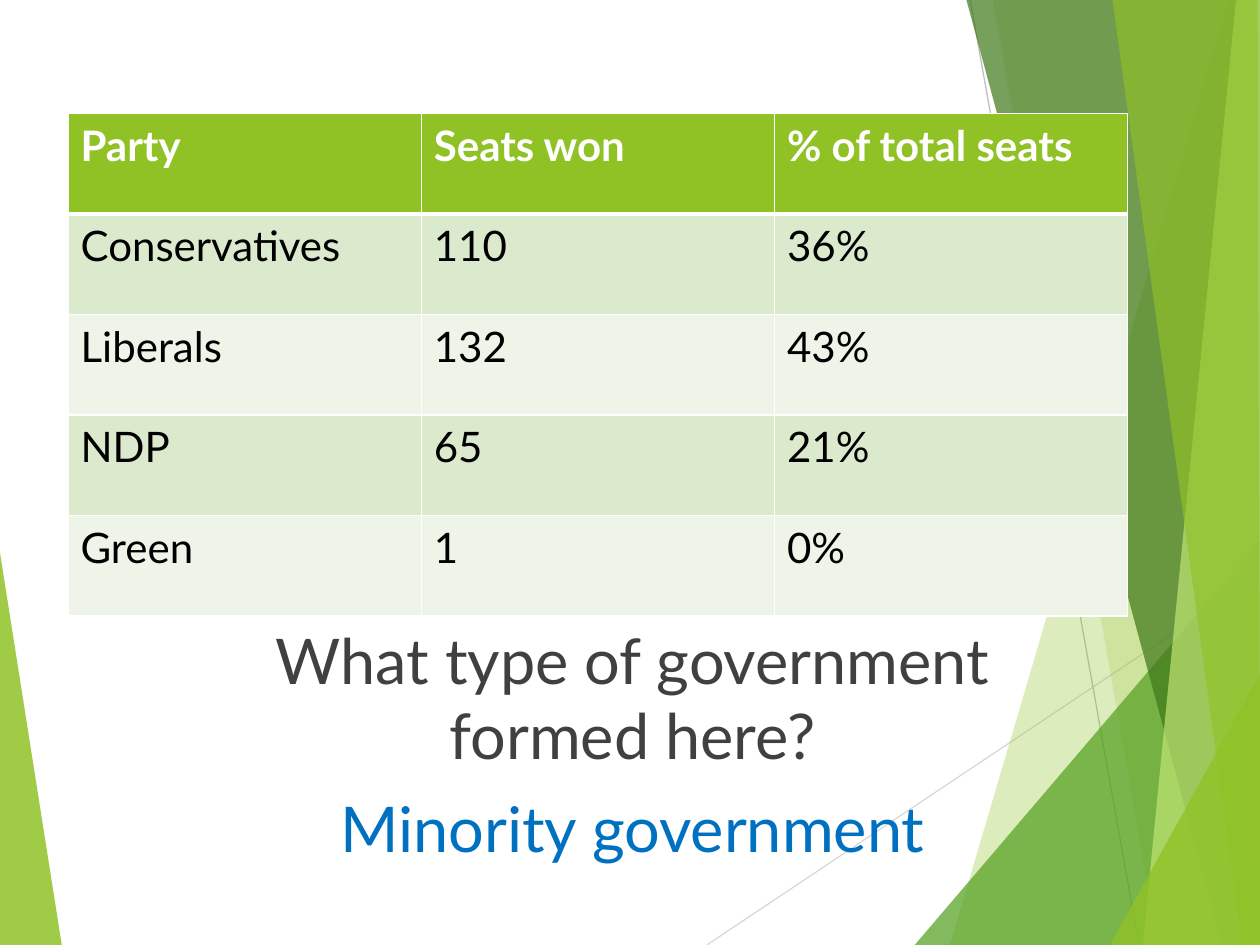
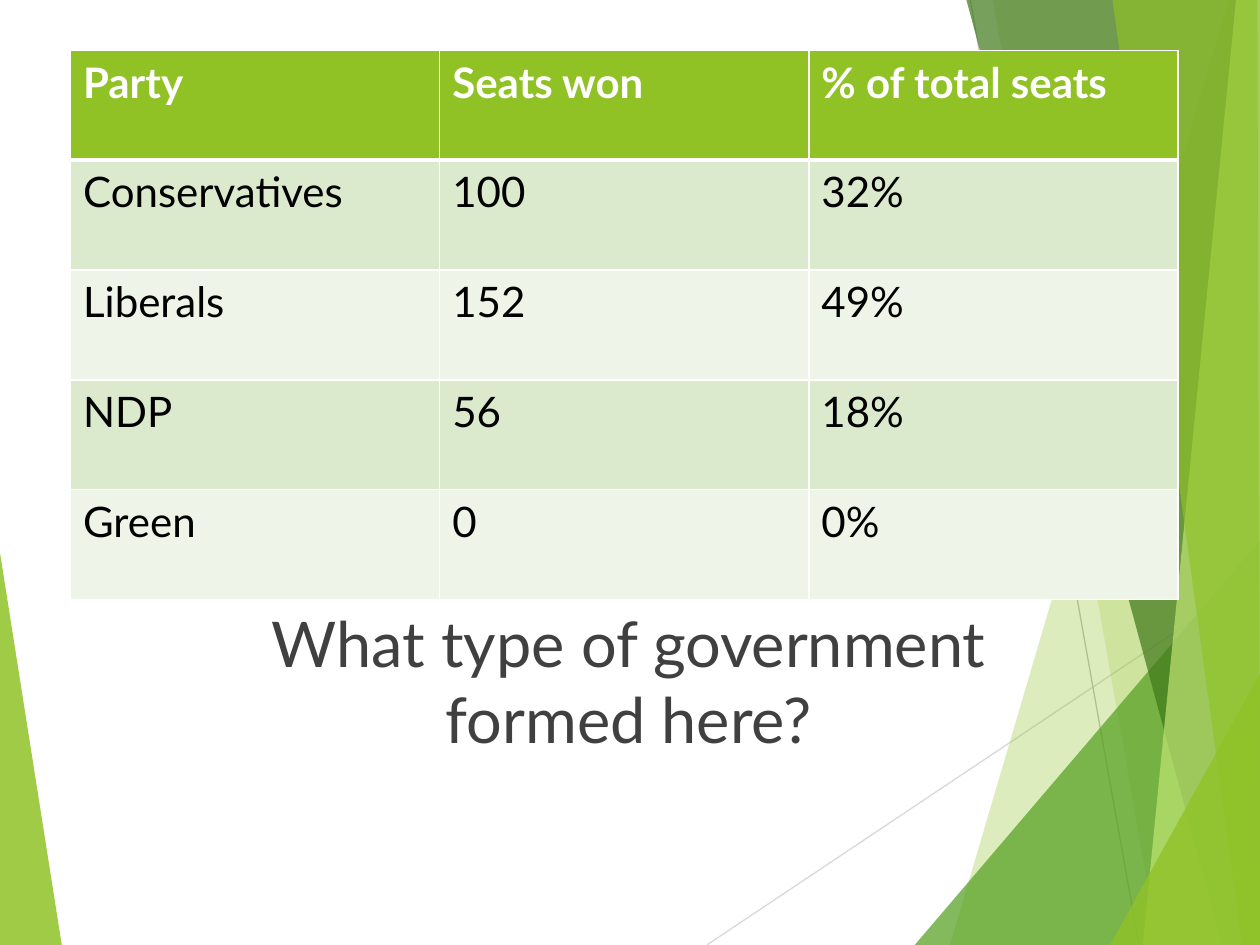
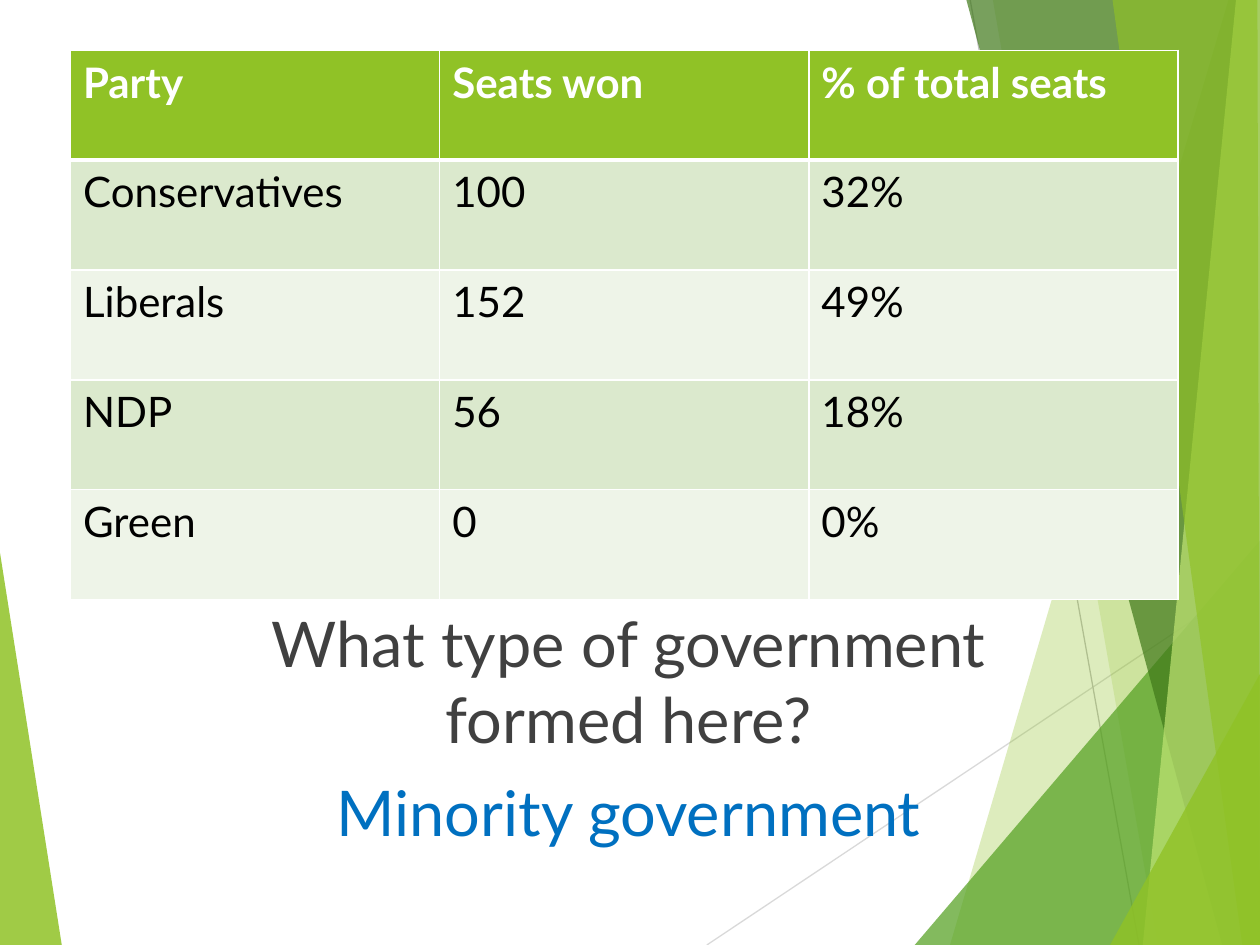
from lxml import etree
from pptx import Presentation
from pptx import util as u
from pptx.dml.color import RGBColor
from pptx.enum import shapes, text
from pptx.oxml.ns import qn

WIDE, HIGH = u.Inches(10), u.Inches(7.5)
FONT = "Lato"
HUES = {
    "lime": "90C226", "leaf": "54A021", "moss": "3F7819", "pale": "C0E474",
    "ash": "D9D9D9", "gray": "BFBFBF", "white": "FFFFFF", "black": "000000",
    "odd": "DBE9CD", "even": "EEF4E8", "ink": "404040", "blue": "0070C0",
}
EAST = [(100, 100), (100, 0)]
LEFT = ([(0, 58.5), (4.9, 100), (0, 100)], "lime", 85)
RAYS = [
    ((56.1, 100), (100, 60.9), "ash"),
    ((77, 0), (90.4, 100), "gray"),
]
BANDS = [
    ([(97.5, 0), (75.4, 100)] + EAST, "lime", 30),
    ([(78.8, 0), (91.9, 100)] + EAST, "lime", 20),
    ([(72.6, 100), (100, 57.2), (100, 100)], "leaf", 72),
    ([(76.7, 0), (97, 100)] + EAST, "moss", 70),
    ([(98.1, 0), (90.7, 100)] + EAST, "pale", 70),
    ([(88.3, 0), (98.6, 100), (100, 100), (99.8, 0)], "lime", 65),
    ([(88.1, 100), (100, 71.3), (100, 100)], "lime", 80),
]
HEAD = ["Party", "Seats won", "% of total seats"]
NAMES = ["Conservatives", "Liberals", "NDP", "Green"]
ASK = "What type of government formed here?"
REPLY = "Minority government"
FIRST = [("110", "36%"), ("132", "43%"), ("65", "21%"), ("1", "0%")]
NEXT = [("100", "32%"), ("152", "49%"), ("56", "18%"), ("0", "0%")]
LOW = {"grid": (5.4, 12, 84.1, 53.2), "body": (16.3, 65.07, 67.8, 28.27)}
TOP = {"grid": (5.6, 5.33, 87.9, 58.13), "body": (16, 63.33, 67.8, 36.67)}
PAGES = [
    (LOW, FIRST, [ASK, REPLY]),
    (TOP, NEXT, [ASK]),
    (TOP, NEXT, [ASK, REPLY]),
]


def hue(name):
    """Return the named colour."""
    return RGBColor.from_string(HUES[name])


def spot(x, y):
    """Turn percentages of the slide into lengths."""
    return u.Emu(round(WIDE * x / 100)), u.Emu(round(HIGH * y / 100))


def frame(box):
    """Turn a box in percentages into left, top, width and height."""
    return spot(*box[:2]) + spot(*box[2:])


def style(font, size, tint, bold=False):
    """Format a font."""
    font.name, font.size, font.bold = FONT, u.Pt(size), bold
    font.color.rgb = hue(tint)


def band(slide, points, tint, alpha):
    """Draw one see-through polygon."""
    first, *rest = [spot(*point) for point in points]
    pen = slide.shapes.build_freeform(*first)
    pen.add_line_segments(rest)
    shape = pen.convert_to_shape()
    shape.shadow.inherit = False
    shape.line.fill.background()
    shape.fill.solid()
    shape.fill.fore_color.rgb = hue(tint)
    color = shape.element.spPr.find(f".//{qn('a:srgbClr')}")
    etree.SubElement(color, qn("a:alpha"), val=str(alpha * 1000))
    return shape


def ray(slide, start, end, tint):
    """Draw one thin line."""
    line = slide.shapes.add_connector(
        shapes.MSO_CONNECTOR.STRAIGHT, *spot(*start), *spot(*end))
    line.line.color.rgb = hue(tint)
    line.line.width = u.Pt(0.75)
    etree.SubElement(line.element.spPr, qn("a:effectLst"))
    return line


def decor(slide):
    """Draw the green bands and move them to the layout."""
    parts = [band(slide, *LEFT)]
    parts += [ray(slide, *item) for item in RAYS]
    parts += [band(slide, *item) for item in BANDS]
    tree = slide.slide_layout.element.cSld.spTree
    for num, part in enumerate(parts, 100):
        part.element.find(f".//{qn('p:cNvPr')}").set("id", str(num))
        tree.append(part.element)


def edge(cell, side, width):
    """Give one side of a cell a white line."""
    line = etree.SubElement(cell._tc.get_or_add_tcPr(), qn(f"a:ln{side}"),
                            w=str(u.Pt(width)))
    fill = etree.SubElement(line, qn("a:solidFill"))
    etree.SubElement(fill, qn("a:srgbClr"), val=HUES["white"])


def grid(slide, box, seats):
    """Place the table of seats in the box."""
    rows = [HEAD] + [[name, *pair] for name, pair in zip(NAMES, seats)]
    table = slide.shapes.add_table(len(rows), len(HEAD), *frame(box)).table
    for r, row in enumerate(rows):
        top = r == 0
        for c, word in enumerate(row):
            cell = table.cell(r, c)
            for side in "LRTB":
                thick = (top and side == "B") or (r == 1 and side == "T")
                edge(cell, side, 3 if thick else 1)
            cell.fill.solid()
            cell.fill.fore_color.rgb = hue(
                "lime" if top else "odd" if r % 2 else "even")
            cell.text_frame.text = word
            style(cell.text_frame.paragraphs[0].runs[0].font, 24,
                  "white" if top else "black", top)


def quiz(slide, box, lines):
    """Place the question and its answer in the body placeholder."""
    body = slide.placeholders[1]
    body.left, body.top, body.width, body.height = frame(box)
    pane = body.text_frame
    pane.text = "\n".join(lines)
    pane.auto_size = text.MSO_AUTO_SIZE.NONE
    pane.vertical_anchor = text.MSO_ANCHOR.TOP
    for n, para in enumerate(pane.paragraphs):
        props = para._p.get_or_add_pPr()
        props.set("marL", "0")
        props.set("indent", "0")
        etree.SubElement(props, qn("a:buNone"))
        para.alignment = text.PP_ALIGN.CENTER
        para.space_before = u.Pt(10 if n else 0)
        style(para.runs[0].font, 36, "blue" if n else "ink")


def page(deck, spots, seats, lines):
    """Add one slide with a table and a question."""
    slide = deck.slides.add_slide(deck.slide_layouts[1])
    title = slide.shapes.title.element
    title.getparent().remove(title)
    quiz(slide, spots["body"], lines)
    grid(slide, spots["grid"], seats)


def main():
    """Build and save the deck."""
    deck = Presentation()
    deck.slide_width, deck.slide_height = WIDE, HIGH
    for item in PAGES:
        page(deck, *item)
    decor(deck.slides[0])
    deck.save("out.pptx")


if __name__ == "__main__":
    main()
